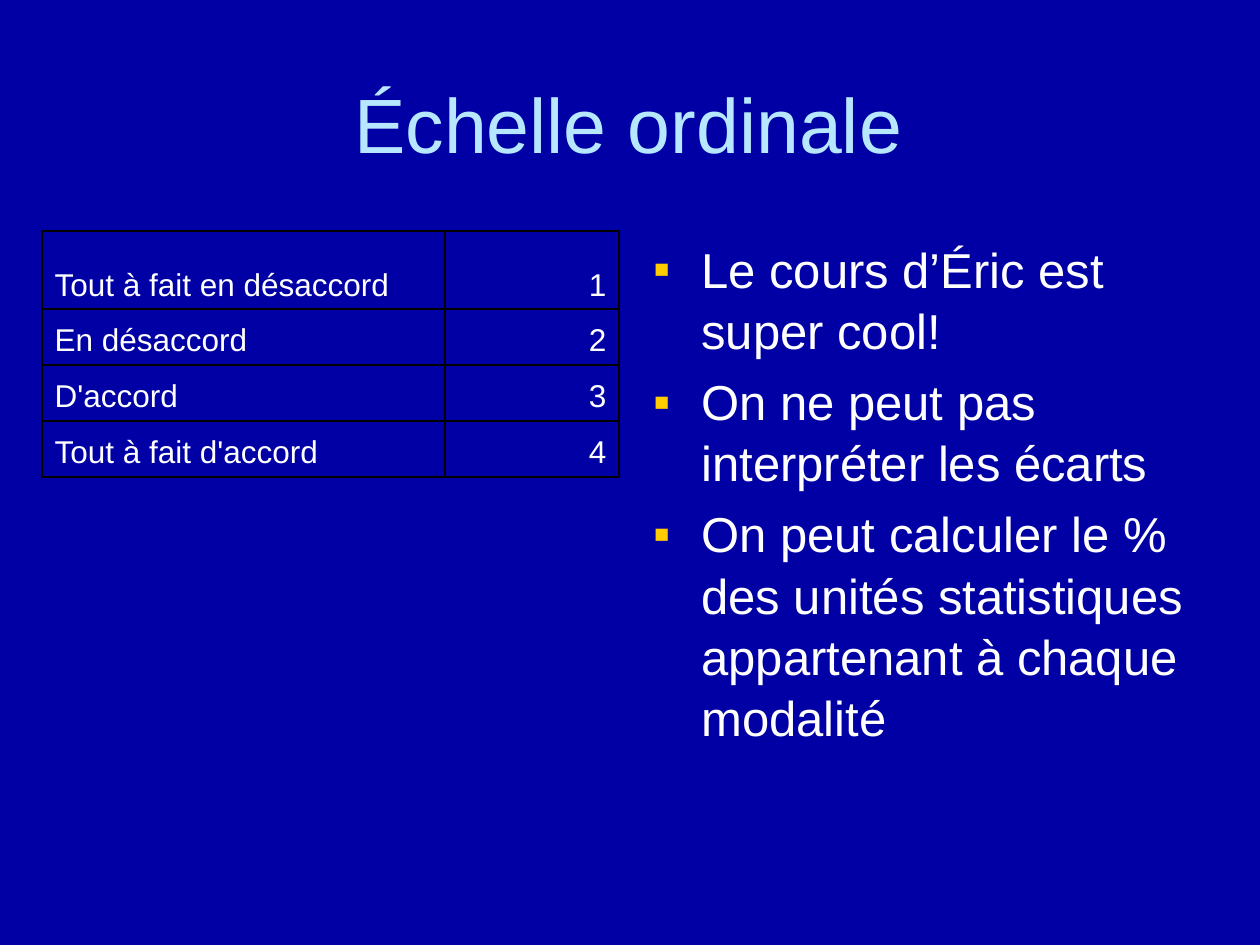
from lxml import etree
from pptx import Presentation
from pptx.dml.color import RGBColor
from pptx.enum.text import MSO_ANCHOR, PP_ALIGN
from pptx.oxml.ns import qn
from pptx.util import Pt

TITLE = "Échelle ordinale"
SCALE_ROWS = [
    ("Tout à fait en désaccord", "1"),
    ("En désaccord", "2"),
    ("D'accord", "3"),
    ("Tout à fait d'accord", "4"),
]
REMARKS = [
    "Le cours d’Éric est super cool!",
    "On ne peut pas interpréter les écarts",
    "On peut calculer le % des unités statistiques appartenant à chaque modalité",
]

PX = 914400 // 126
FONT = "Arial"
NAVY = RGBColor(0x00, 0x00, 0xA4)
PALE_BLUE = RGBColor(0xB7, 0xE7, 0xFF)
WHITE = RGBColor(0xFF, 0xFF, 0xFF)
BULLET_COLOR = RGBColor(0xFF, 0xCC, 0x00)
BORDER_COLOR = RGBColor(0x00, 0x00, 0x00)
LEFT, CENTER, RIGHT = PP_ALIGN.LEFT, PP_ALIGN.CENTER, PP_ALIGN.RIGHT
MIDDLE, BOTTOM = MSO_ANCHOR.MIDDLE, MSO_ANCHOR.BOTTOM

TITLE_BOX = (42, 32, 1173, 182)
TABLE_BOX = (42, 231, 577, 246)
REMARKS_BOX = (641, 231, 577, 610)
COLUMN_WIDTHS = (403, 174)
ROW_HEIGHTS = (78, 56, 56, 56)
INDENT = 48

TITLE_FORMAT = {"name": FONT, "size": Pt(44), "color": PALE_BLUE}
CELL_FORMAT = {"name": FONT, "size": Pt(18), "color": WHITE}
REMARK_FORMAT = {"name": FONT, "size": Pt(28), "color": WHITE}


def emu(lengths):
    return [length * PX for length in lengths]


def format_font(font, values):
    for name, value in values.items():
        if name == "color":
            font.color.rgb = value
        else:
            setattr(font, name, value)


def add_color(parent, color):
    fill = etree.SubElement(parent, qn("a:solidFill"))
    etree.SubElement(fill, qn("a:srgbClr"), val=str(color))


def add_borders(cell):
    properties = cell._tc.get_or_add_tcPr()
    for index, side in enumerate(("lnL", "lnR", "lnT", "lnB")):
        line = etree.Element(qn(f"a:{side}"), w=str(Pt(1)))
        add_color(line, BORDER_COLOR)
        properties.insert(index, line)


def add_bullet(paragraph):
    properties = paragraph._p.get_or_add_pPr()
    properties.set("marL", str(INDENT * PX))
    properties.set("indent", str(-INDENT * PX))
    color = etree.SubElement(properties, qn("a:buClr"))
    etree.SubElement(color, qn("a:srgbClr"), val=str(BULLET_COLOR))
    etree.SubElement(properties, qn("a:buFont"), typeface=FONT)
    etree.SubElement(properties, qn("a:buChar"), char="▪")


def add_title(slide):
    title = slide.shapes.title
    title.left, title.top, title.width, title.height = emu(TITLE_BOX)
    title.text_frame.text = TITLE
    title.text_frame.vertical_anchor = MIDDLE
    paragraph = title.text_frame.paragraphs[0]
    paragraph.alignment = CENTER
    format_font(paragraph.font, TITLE_FORMAT)


def add_scale_table(slide):
    table = slide.shapes.add_table(
        len(SCALE_ROWS), len(COLUMN_WIDTHS), *emu(TABLE_BOX)).table
    table.first_row = table.horz_banding = False
    for column, width in zip(table.columns, emu(COLUMN_WIDTHS)):
        column.width = width
    for row, height, texts in zip(table.rows, emu(ROW_HEIGHTS), SCALE_ROWS):
        row.height = height
        for cell, text, alignment in zip(row.cells, texts, (LEFT, RIGHT)):
            cell.text = text
            cell.vertical_anchor = BOTTOM
            cell.fill.background()
            add_borders(cell)
            paragraph = cell.text_frame.paragraphs[0]
            paragraph.alignment = alignment
            format_font(paragraph.font, CELL_FORMAT)


def add_remarks(slide):
    frame = slide.shapes.add_textbox(*emu(REMARKS_BOX)).text_frame
    frame.word_wrap = True
    for index, text in enumerate(REMARKS):
        paragraph = frame.paragraphs[0] if index == 0 else frame.add_paragraph()
        paragraph.text = text
        add_bullet(paragraph)
        paragraph.line_spacing = 1.04
        if index:
            paragraph.space_before = Pt(5.6)
        format_font(paragraph.font, REMARK_FORMAT)


def main():
    presentation = Presentation()
    presentation.slide_width, presentation.slide_height = emu((1260, 945))
    slide = presentation.slides.add_slide(presentation.slide_layouts[5])
    slide.background.fill.solid()
    slide.background.fill.fore_color.rgb = NAVY
    add_title(slide)
    add_scale_table(slide)
    add_remarks(slide)
    presentation.save("out.pptx")


if __name__ == "__main__":
    main()
